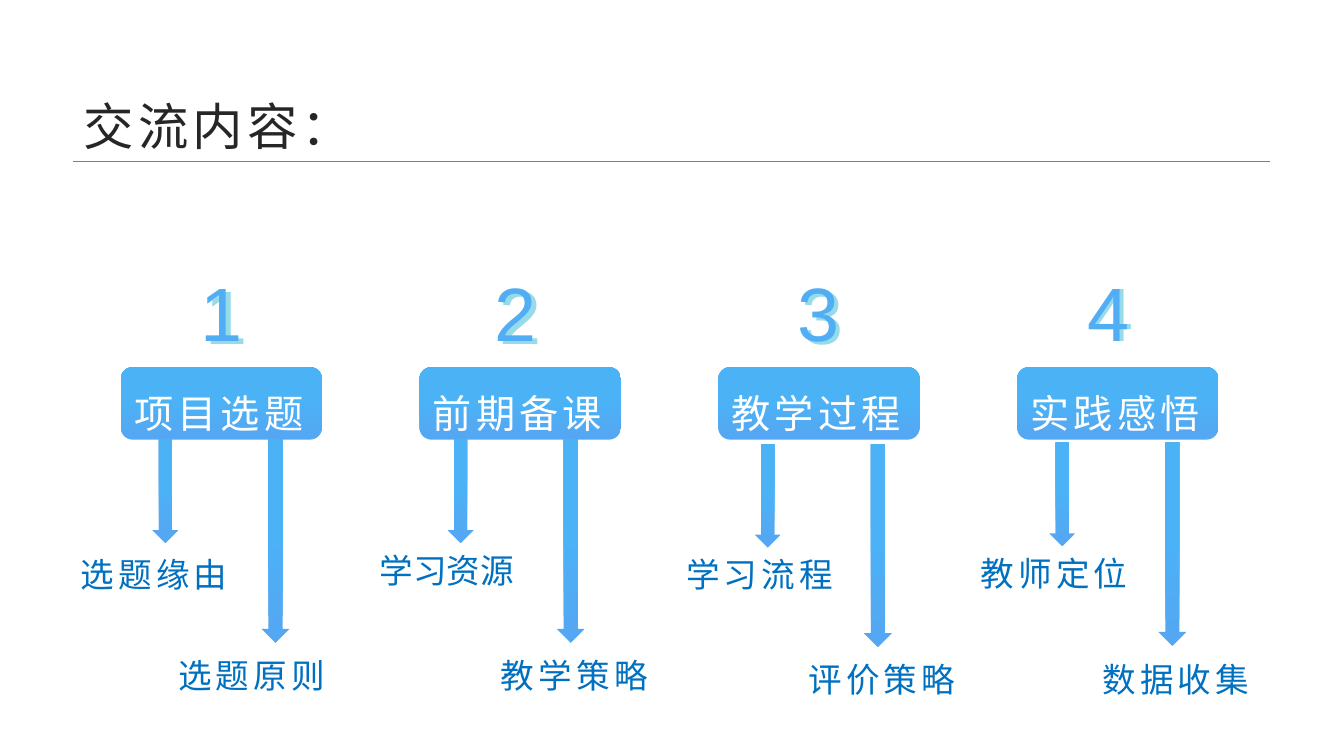
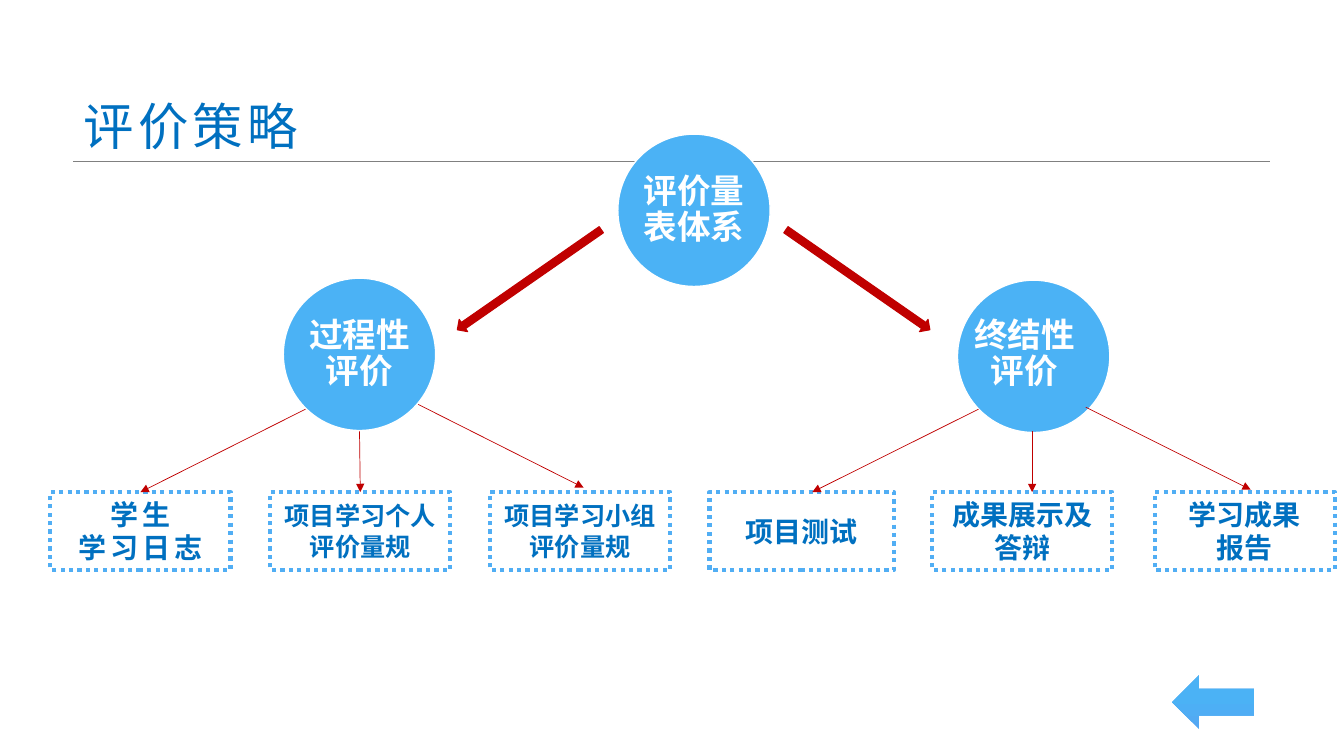
"""Build two slides: the talk outline and the evaluation system tree."""

from copy import deepcopy
from dataclasses import dataclass

from lxml.etree import SubElement
from pptx import Presentation
from pptx.dml.color import RGBColor
from pptx.enum.dml import MSO_LINE
from pptx.enum.shapes import MSO_CONNECTOR, MSO_SHAPE
from pptx.enum.text import MSO_ANCHOR as Anchor, MSO_AUTO_SIZE, PP_ALIGN as Align
from pptx.oxml.ns import qn
from pptx.util import Cm, Pt

Point = tuple[float, float]
Box = tuple[float, float, float, float]


@dataclass(frozen=True)
class Theme:
    font: str = "Arial"
    ink: str = "262626"
    white: str = "FFFFFF"
    rule: str = "808080"
    label: str = "0070C0"
    sky: str = "4BB2F5"
    bright: str = "51AEF4"
    echo: str = "95DBE9"
    red: str = "C00000"
    gradient: tuple = ((0.02, "54A7F3"), (0.58, "4BB2F5"), (1, "4BB4F6"))
    number_size: int = 54
    title_size: int = 36
    topic_size: int = 28
    body_size: int = 24
    card_size: int = 20
    small_size: int = 18
    wide: int = 3


@dataclass(frozen=True)
class Label:
    text: str
    at: Point
    spacing: int = 3


@dataclass(frozen=True)
class Topic:
    name: str
    number_left: float
    echo_drop: float
    arrow_at: Point
    near: Label
    far: Label


@dataclass(frozen=True)
class Circle:
    text: str
    at: Point
    caption_at: Point


@dataclass(frozen=True)
class Card:
    text: str
    link_from: Point
    link_to: Point | None = None
    size: int = 20
    width: float = 4.54
    spacing: int = 0


@dataclass(frozen=True)
class Branch:
    left: float
    pitch: float
    cards: tuple[Card, ...]


THEME = Theme()

TOPICS = (
    Topic("项目选题", 4.8, 0.07, (3.84, 11.07),
          Label("选题缘由", (1.78, 13.84)), Label("选题原则", (4.24, 16.38))),
    Topic("前期备课", 12.22, 0.07, (11.28, 11.07),
          Label("学习资源", (9.32, 13.72), 0), Label("教学策略", (12.37, 16.38))),
    Topic("教学过程", 19.84, 0.07, (19.02, 11.18),
          Label("学习流程", (17.04, 13.84)), Label("评价策略", (20.12, 16.48))),
    Topic("实践感悟", 27.15, 0, (26.44, 11.15),
          Label("教师定位", (24.46, 13.82)), Label("数据收集", (27.53, 16.48))),
)

CIRCLES = (
    Circle("过程性评价", (7.14, 7.01), (7.7, 7.58)),
    Circle("终结性评价", (24.13, 7.06), (24.46, 7.58)),
    Circle("评价量表体系", (15.57, 3.38), (16.13, 3.94)),
)

BRANCHES = (
    Branch(1.27, 5.54, (
        Card("学生\n学习日志", (7.7, 10.31), spacing=THEME.wide),
        Card("项目学习个人评价量规", (9.06, 10.87), size=THEME.small_size),
        Card("项目学习小组评价量规", (10.54, 10.19), (14.71, 12.29), size=THEME.small_size),
    )),
    Branch(17.88, 5.61, (
        Card("项目测试", (24.66, 10.31), (20.47, 12.4), width=4.65),
        Card("成果展示及答辩", (26.01, 10.87), (26.01, 12.4)),
        Card("学习成果\n报告", (27.36, 10.26), (31.52, 12.34)),
    )),
)


def rgb(color: str) -> RGBColor:
    """Turn a hex string into a colour."""
    return RGBColor.from_string(color)


def put_text(shape, text: str, *, size: float, color: str, bold: bool = False,
             spacing: float = 0, align=Align.LEFT, anchor=Anchor.TOP,
             line_spacing: float = 1.0, wrap: bool = True,
             inset: float | None = None) -> None:
    """Write text into a shape, one paragraph per line."""
    frame = shape.text_frame
    frame.word_wrap = wrap
    frame.auto_size = MSO_AUTO_SIZE.NONE
    frame.vertical_anchor = anchor
    if inset is not None:
        frame.margin_left = frame.margin_right = Cm(inset)
        frame.margin_top = frame.margin_bottom = Cm(inset)
    for index, line in enumerate(text.split("\n")):
        paragraph = frame.add_paragraph() if index else frame.paragraphs[0]
        paragraph.alignment = align
        paragraph.line_spacing = line_spacing
        run = paragraph.add_run()
        run.text = line
        run.font.name = THEME.font
        run.font.size = Pt(size)
        run.font.bold = bold
        run.font.color.rgb = rgb(color)
        if spacing:
            run.font._element.set("spc", str(round(spacing * 100)))


def add_text(slide, box: Box, text: str, **style) -> None:
    """Add a text box at a place given in centimetres."""
    put_text(slide.shapes.add_textbox(*map(Cm, box)), text, **style)


def add_block(slide, kind, box: Box, *, fill: str | None = None,
              line: str | None = None, line_width: float = 1):
    """Add a flat preset shape with an optional solid fill and outline."""
    block = slide.shapes.add_shape(kind, *map(Cm, box))
    block.shadow.inherit = False
    if fill:
        block.fill.solid()
        block.fill.fore_color.rgb = rgb(fill)
    else:
        block.fill.background()
    if line:
        block.line.color.rgb = rgb(line)
        block.line.width = Pt(line_width)
    else:
        block.line.fill.background()
    return block


def add_gradient_block(slide, kind, box: Box):
    """Add a preset shape with the shared blue gradient."""
    block = add_block(slide, kind, box)
    block.fill.gradient()
    block.fill.gradient_angle = 90
    stops = block._element.spPr.find(".//" + qn("a:gsLst"))
    stops.insert(1, deepcopy(stops[0]))
    for stop, (position, color) in zip(block.fill.gradient_stops, THEME.gradient):
        stop.position = position
        stop.color.rgb = rgb(color)
    return block


def add_line(slide, start: Point, end: Point, *, color: str, width: float,
             arrow: bool = False):
    """Add a straight connector, optionally with an arrowhead at its end."""
    line = slide.shapes.add_connector(MSO_CONNECTOR.STRAIGHT, *map(Cm, start + end))
    line.line.color.rgb = rgb(color)
    line.line.width = Pt(width)
    properties = line._element.spPr
    if arrow:
        SubElement(properties.find(qn("a:ln")), qn("a:tailEnd"), type="triangle")
    SubElement(properties, qn("a:effectLst"))
    return line


def add_titled_slide(deck, title: str, *, color: str, width: float):
    """Add a slide with the shared title style and the rule under it."""
    slide = deck.slides.add_slide(deck.slide_layouts[5])
    heading = slide.shapes.title
    heading.left, heading.top, heading.width, heading.height = map(
        Cm, (1.85, 1.24, width, 2.84))
    put_text(heading, title, size=THEME.title_size, color=color, spacing=THEME.wide,
             anchor=Anchor.BOTTOM, line_spacing=0.9)
    add_line(slide, (1.85, 4.06), (32, 4.06), color=THEME.rule, width=0.25)
    return slide


def draw_topic(slide, index: int, topic: Topic) -> None:
    """Draw one numbered topic with its two arrows and labels."""
    plate = add_gradient_block(slide, MSO_SHAPE.ROUNDED_RECTANGLE,
                               (3.04 + 7.53 * index, 9.25, 5.08, 1.83))
    put_text(plate, topic.name, size=THEME.topic_size, color=THEME.white,
             spacing=THEME.wide, line_spacing=1.3, wrap=False)
    for shift, drop, color in ((0.12, topic.echo_drop, THEME.echo), (0, 0, THEME.bright)):
        add_text(slide, (topic.number_left + shift, 6.58 + drop, 2.84, 2.57),
                 str(index + 1), size=THEME.number_size, color=color)
    left, top = topic.arrow_at
    add_gradient_block(slide, MSO_SHAPE.DOWN_ARROW, (left, top, 0.66, 2.62))
    add_gradient_block(slide, MSO_SHAPE.DOWN_ARROW, (left + 2.75, top, 0.71, 5.13))
    for label in (topic.near, topic.far):
        add_text(slide, (*label.at, 4.93, 1.27), label.text, size=THEME.body_size,
                 color=THEME.label, spacing=label.spacing)


def draw_circle(slide, circle: Circle) -> None:
    """Draw one circle of the tree with its caption."""
    add_block(slide, MSO_SHAPE.OVAL, (*circle.at, 3.84, 3.84),
              fill=THEME.sky, line=THEME.white)
    add_text(slide, (*circle.caption_at, 2.72, 2.72), circle.text, size=THEME.body_size,
             color=THEME.white, bold=True, align=Align.CENTER, anchor=Anchor.MIDDLE,
             line_spacing=0.9, inset=0.07)


def draw_branch(slide, branch: Branch) -> None:
    """Draw a row of dotted cards and the links that lead to them."""
    for index, card in enumerate(branch.cards):
        left, top = branch.left + branch.pitch * index, 12.4
        frame = add_block(slide, MSO_SHAPE.RECTANGLE, (left, top, card.width, 1.96),
                          line=THEME.bright, line_width=3)
        frame.line.dash_style = MSO_LINE.ROUND_DOT
        put_text(frame, card.text, size=card.size, color=THEME.label, bold=True,
                 spacing=card.spacing, align=Align.CENTER, anchor=Anchor.MIDDLE)
        top_middle = (left + card.width / 2, top)
        link = add_line(slide, card.link_from, card.link_to or top_middle,
                        color=THEME.red, width=0.5, arrow=True)
        if card.link_to is None:
            link.end_connect(frame, 0)


def build_outline(deck) -> None:
    """Build the outline slide."""
    slide = add_titled_slide(deck, "交流内容：", color=THEME.ink, width=30.15)
    for index, topic in enumerate(TOPICS):
        draw_topic(slide, index, topic)


def build_evaluation(deck) -> None:
    """Build the evaluation tree slide."""
    slide = add_titled_slide(deck, "评价策略", color=THEME.label, width=16.76)
    for circle in CIRCLES:
        draw_circle(slide, circle)
    for kind, left, turn in ((MSO_SHAPE.LEFT_ARROW, 11.13, -34.8),
                             (MSO_SHAPE.RIGHT_ARROW, 19.41, 34.8)):
        arrow = add_block(slide, kind, (left, 6.86, 4.42, 0.38),
                          fill=THEME.red, line=THEME.red, line_width=0.75)
        arrow.rotation = turn
    for branch in BRANCHES:
        draw_branch(slide, branch)
    add_gradient_block(slide, MSO_SHAPE.LEFT_ARROW, (29.54, 17.02, 2.08, 1.35))


def main() -> None:
    """Build and save the deck."""
    deck = Presentation()
    deck.slide_width, deck.slide_height = Cm(33.87), Cm(19.05)
    build_outline(deck)
    build_evaluation(deck)
    deck.save("out.pptx")


if __name__ == "__main__":
    main()
